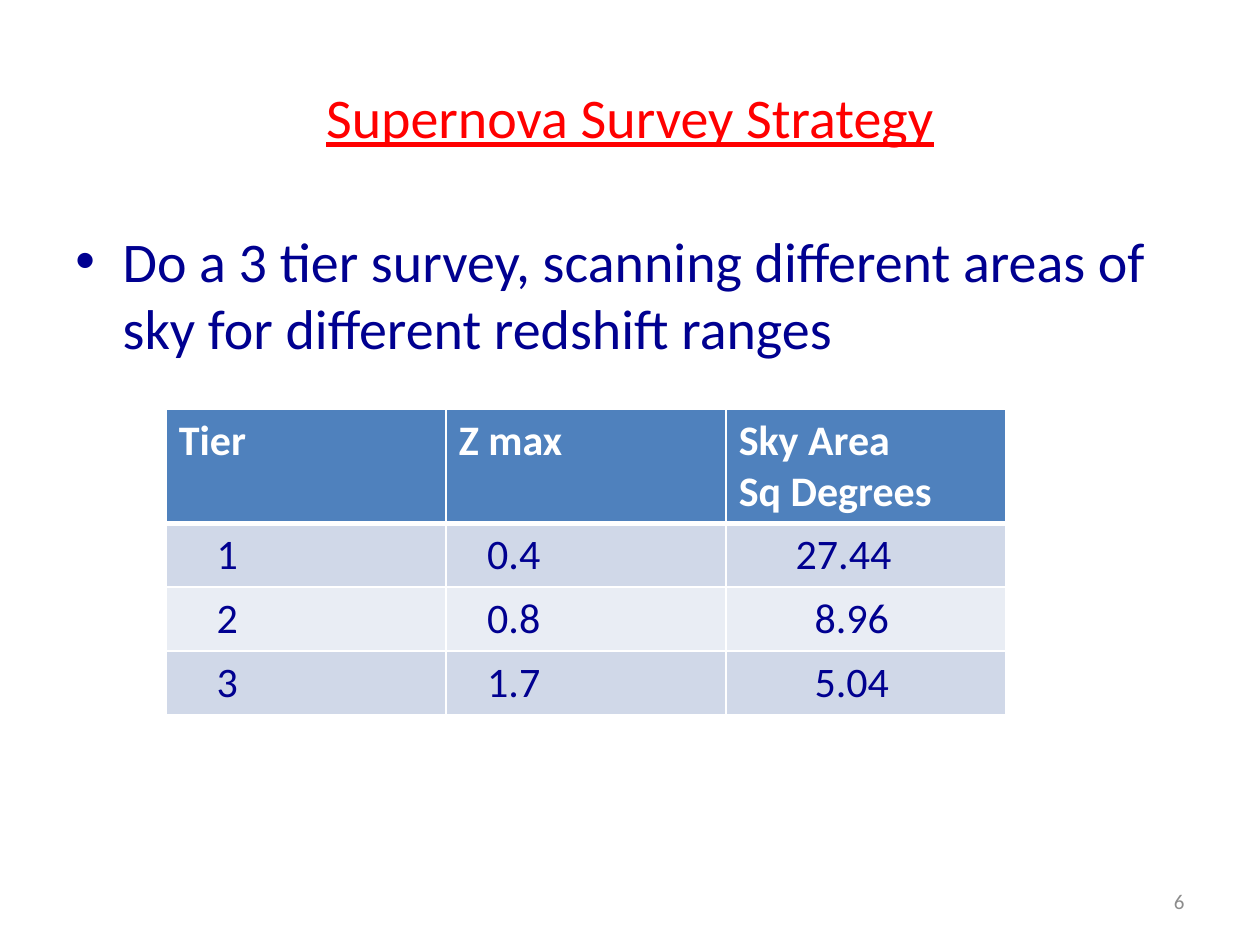
from lxml import etree
from pptx import Presentation
from pptx import util as u
from pptx.dml.color import RGBColor
from pptx.enum import text
from pptx.oxml import ns

Pt = u.Pt
FONT = "Calibri"
NAVY, WHITE, RED, GREY = "000090", "FFFFFF", "FF0000", "8C8C8C"
HEADER_FILL, BAND_FILLS = "4F81BD", ("D0D8E8", "E9EDF4")
SPACE = 5.42
HEADINGS = [["Tier"], ["Z max"], ["Sky Area", "Sq Degrees"]]
TIERS = [("1", "0.4", "27.44"), ("2", "0.8", "8.96"), ("3", "1.7", "5.04")]


def color(value):
    return RGBColor.from_string(value)


def add_run(paragraph, words, size, ink, bold=False, underline=False):
    run = paragraph.add_run()
    run.text = words
    font = run.font
    font.name, font.size = FONT, Pt(size)
    font.bold, font.underline = bold, underline
    font.color.rgb = color(ink)


def add_frame(slide, box, anchor, align):
    frame = slide.shapes.add_textbox(*map(Pt, box)).text_frame
    frame.word_wrap = True
    frame.vertical_anchor = anchor
    paragraph = frame.paragraphs[0]
    paragraph.alignment = align
    return paragraph


def add_title(slide, box):
    title = add_frame(slide, box, text.MSO_ANCHOR.MIDDLE, text.PP_ALIGN.CENTER)
    add_run(title, "Supernova Survey Strategy", 32, RED, underline=True)


def add_body(slide, box):
    plan = add_frame(slide, box, text.MSO_ANCHOR.TOP, text.PP_ALIGN.LEFT)
    props = plan._p.get_or_add_pPr()
    props.set("marL", str(Pt(27)))
    props.set("indent", str(Pt(-27)))
    etree.SubElement(props, ns.qn("a:buFont"), typeface="Arial")
    etree.SubElement(props, ns.qn("a:buChar"), char="•")
    add_run(plan, "Do a 3 tier survey, scanning different areas of sky "
            "for different redshift ranges", 32, NAVY)


def add_page_number(slide, box):
    number = add_frame(slide, box, text.MSO_ANCHOR.MIDDLE, text.PP_ALIGN.RIGHT)
    add_run(number, "6", 12, GREY)


def style_cell(cell, fill, top, bottom):
    props = cell._tc.get_or_add_tcPr()
    for side, width in (("L", 1), ("R", 1), ("T", top), ("B", bottom)):
        line = etree.SubElement(props, ns.qn(f"a:ln{side}"), w=str(Pt(width)))
        ink = etree.SubElement(line, ns.qn("a:solidFill"))
        etree.SubElement(ink, ns.qn("a:srgbClr"), val=WHITE)
    cell.fill.solid()
    cell.fill.fore_color.rgb = color(fill)


def add_tier_table(slide, box):
    left, top, width, height = box
    header_height = 65
    row_height = (height - header_height) / len(TIERS)
    table = slide.shapes.add_table(len(TIERS) + 1, len(HEADINGS), *map(Pt, box)).table
    for column in table.columns:
        column.width = Pt(width / len(HEADINGS))
    for index, row in enumerate(table.rows):
        row.height = Pt(row_height if index else header_height)

    for col, lines in enumerate(HEADINGS):
        cell = table.cell(0, col)
        style_cell(cell, HEADER_FILL, 1, 3)
        heading = cell.text_frame.paragraphs[0]
        for index, words in enumerate(lines):
            if index:
                heading.add_line_break()
            add_run(heading, words, 24, WHITE, bold=True)

    for row, values in enumerate(TIERS, 1):
        area_spaces = 6 if row == 1 else 8
        for col, (value, spaces) in enumerate(zip(values, (4, 3, area_spaces))):
            cell = table.cell(row, col)
            style_cell(cell, BAND_FILLS[(row - 1) % 2], 3 if row == 1 else 1, 1)
            cell.margin_left = Pt(7.2 + spaces * SPACE)
            add_run(cell.text_frame.paragraphs[0], value, 24, NAVY)


def main():
    deck = Presentation()
    deck.slide_width, deck.slide_height = Pt(720), Pt(540)
    slide = deck.slides.add_slide(deck.slide_layouts[6])
    slide.background.fill.solid()
    slide.background.fill.fore_color.rgb = color(WHITE)
    add_title(slide, (36, 21.6, 648, 90))
    add_body(slide, (36, 126, 648, 356.4))
    add_page_number(slide, (516, 500.4, 168, 28.8))
    add_tier_table(slide, (95, 234, 480, 174.5))
    deck.save("out.pptx")


if __name__ == "__main__":
    main()
